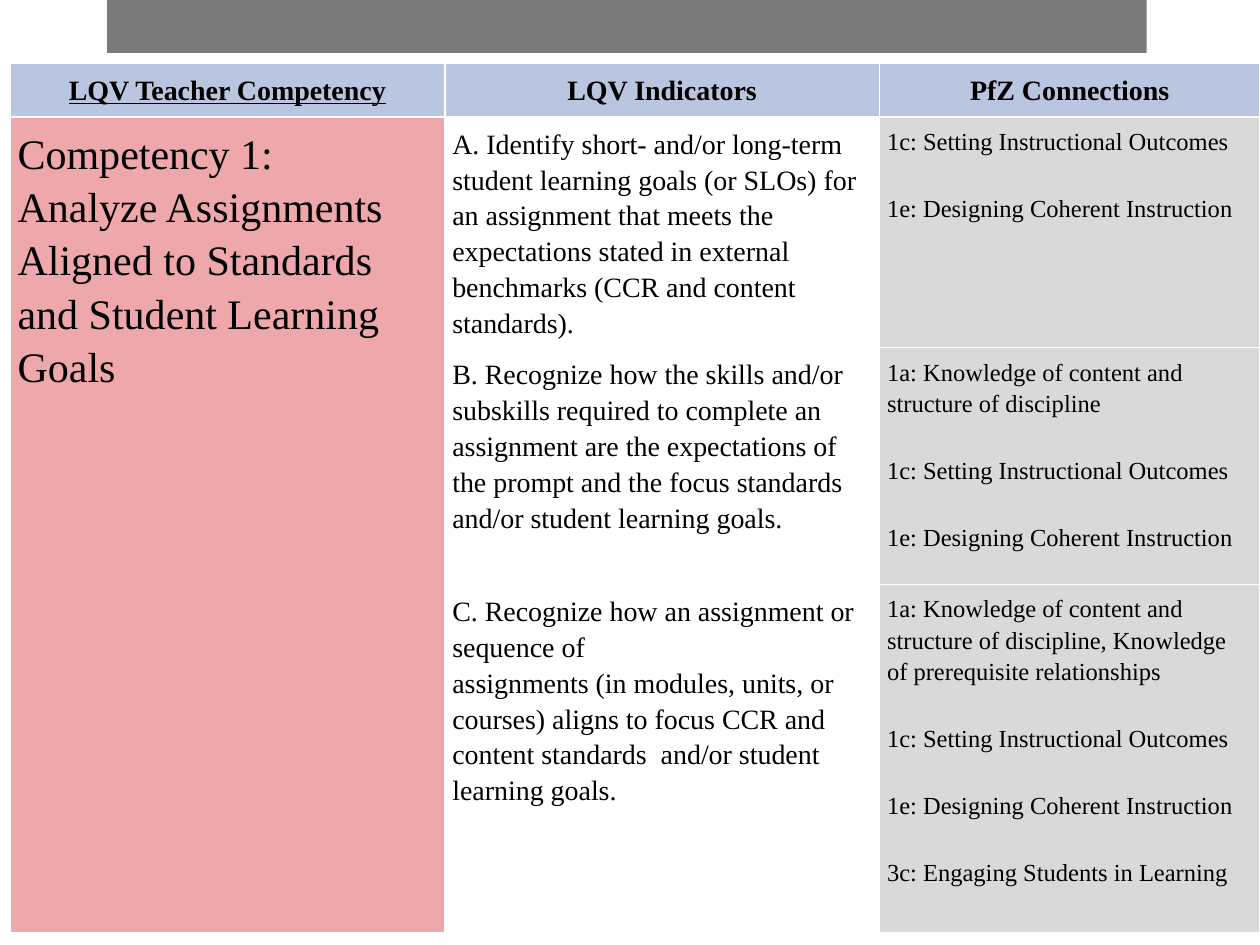
"""Build a slide with a table linking a teacher competency to its indicators."""
from dataclasses import dataclass

from pptx import Presentation
from pptx.dml.color import RGBColor
from pptx.enum.shapes import MSO_SHAPE as Shape
from pptx.enum.text import PP_ALIGN as Align
from pptx.oxml import parse_xml
from pptx.oxml.ns import nsdecls
from pptx.table import _Cell as Cell
from pptx.util import Inches, Pt

BLACK = RGBColor(0x00, 0x00, 0x00)
WHITE = RGBColor(0xFF, 0xFF, 0xFF)
GRAY = RGBColor(0x7A, 0x7A, 0x7A)
LIGHT_GRAY = RGBColor(0xD9, 0xD9, 0xD9)
BLUE = RGBColor(0xBA, 0xC5, 0xDF)
PINK = RGBColor(0xEE, 0xA7, 0xAA)

FONT = "Times New Roman"
COLUMN_WIDTHS = (3.45, 3.45, 3.02)
ROW_HEIGHTS = (0.43, 1.83, 1.88, 2.76)
OUTCOMES = "1c: Setting Instructional Outcomes"
COHERENT = "1e: Designing Coherent Instruction"
KNOWLEDGE = "1a: Knowledge of content and structure of discipline"


@dataclass(frozen=True)
class Style:
    """Look of one kind of table cell."""
    fill: RGBColor
    size: float
    gap: float = 0
    bold: bool = False
    align: Align = Align.LEFT


@dataclass(frozen=True)
class Entry:
    """Text of one table cell and its place."""
    row: int
    column: int
    style: Style
    lines: tuple[str, ...]
    underline: bool = False


HEADER = Style(BLUE, 16, bold=True, align=Align.CENTER)
COMPETENCY = Style(PINK, 24)
INDICATOR = Style(WHITE, 16)
CONNECTION = Style(LIGHT_GRAY, 14, gap=20.5)

ENTRIES = (
    Entry(0, 0, HEADER, ("LQV Teacher Competency",), underline=True),
    Entry(0, 1, HEADER, ("LQV Indicators",)),
    Entry(0, 2, HEADER, ("PfZ Connections",)),
    Entry(1, 0, COMPETENCY, (
        "Competency 1:",
        "Analyze Assignments Aligned to Standards and Student Learning Goals")),
    Entry(1, 1, INDICATOR, (
        "A. Identify short- and/or long-term student learning goals (or SLOs) for an assignment "
        "that meets the expectations stated in external benchmarks (CCR and content standards).",)),
    Entry(1, 2, CONNECTION, (OUTCOMES, COHERENT)),
    Entry(2, 1, INDICATOR, (
        "B. Recognize how the skills and/or subskills required to complete an assignment are the "
        "expectations of the prompt and the focus standards and/or student learning goals.",)),
    Entry(2, 2, CONNECTION, (KNOWLEDGE, OUTCOMES, COHERENT)),
    Entry(3, 1, INDICATOR, (
        "C. Recognize how an assignment or sequence of",
        "assignments (in modules, units, or courses) aligns to focus CCR and content standards  "
        "and/or student learning goals.")),
    Entry(3, 2, CONNECTION, (
        f"{KNOWLEDGE}, Knowledge of prerequisite relationships",
        OUTCOMES, COHERENT, "3c: Engaging Students in Learning")),
)


def add_borders(cell: Cell) -> None:
    """Give all four sides of a cell a thin white line."""
    properties = cell._tc.get_or_add_tcPr()
    for side in ("lnL", "lnR", "lnT", "lnB"):
        properties.append(parse_xml(
            f'<a:{side} {nsdecls("a")} w="{Pt(1)}"><a:solidFill>'
            f'<a:srgbClr val="{WHITE}"/></a:solidFill></a:{side}>'))


def fill_cell(cell: Cell, entry: Entry) -> None:
    """Write one entry into its cell."""
    style = entry.style
    cell.fill.solid()
    cell.fill.fore_color.rgb = style.fill
    cell.margin_left = cell.margin_right = Inches(0.06)
    cell.margin_top = cell.margin_bottom = Inches(0.06)
    for index, line in enumerate(entry.lines):
        frame = cell.text_frame
        para = frame.add_paragraph() if index else frame.paragraphs[0]
        para.alignment = style.align
        para.line_spacing = 1.15
        para.space_before = Pt(style.gap if index else 0)
        span = para.add_run()
        span.text = line
        span.font.name = FONT
        span.font.size = Pt(style.size)
        span.font.bold = style.bold
        span.font.underline = entry.underline
        span.font.color.rgb = BLACK


def main() -> None:
    """Draw the top bar and the table, then save the deck."""
    deck = Presentation()
    deck.slide_width, deck.slide_height = Inches(10), Inches(7.5)
    page = deck.slides.add_slide(deck.slide_layouts[6])

    bar = page.shapes.add_shape(Shape.RECTANGLE, Inches(0.85), 0, Inches(8.25), Inches(0.42))
    bar.shadow.inherit = False
    bar.fill.solid()
    bar.fill.fore_color.rgb = GRAY
    bar.line.fill.background()

    table = page.shapes.add_table(
        len(ROW_HEIGHTS), len(COLUMN_WIDTHS), Inches(0.08), Inches(0.5),
        Inches(sum(COLUMN_WIDTHS)), Inches(sum(ROW_HEIGHTS))).table
    table.horz_banding = False
    for column, width in zip(table.columns, COLUMN_WIDTHS):
        column.width = Inches(width)
    for row, height in zip(table.rows, ROW_HEIGHTS):
        row.height = Inches(height)
    for cell in table.iter_cells():
        add_borders(cell)
    table.cell(1, 0).merge(table.cell(3, 0))
    for entry in ENTRIES:
        fill_cell(table.cell(entry.row, entry.column), entry)

    deck.save("out.pptx")


if __name__ == "__main__":
    main()
